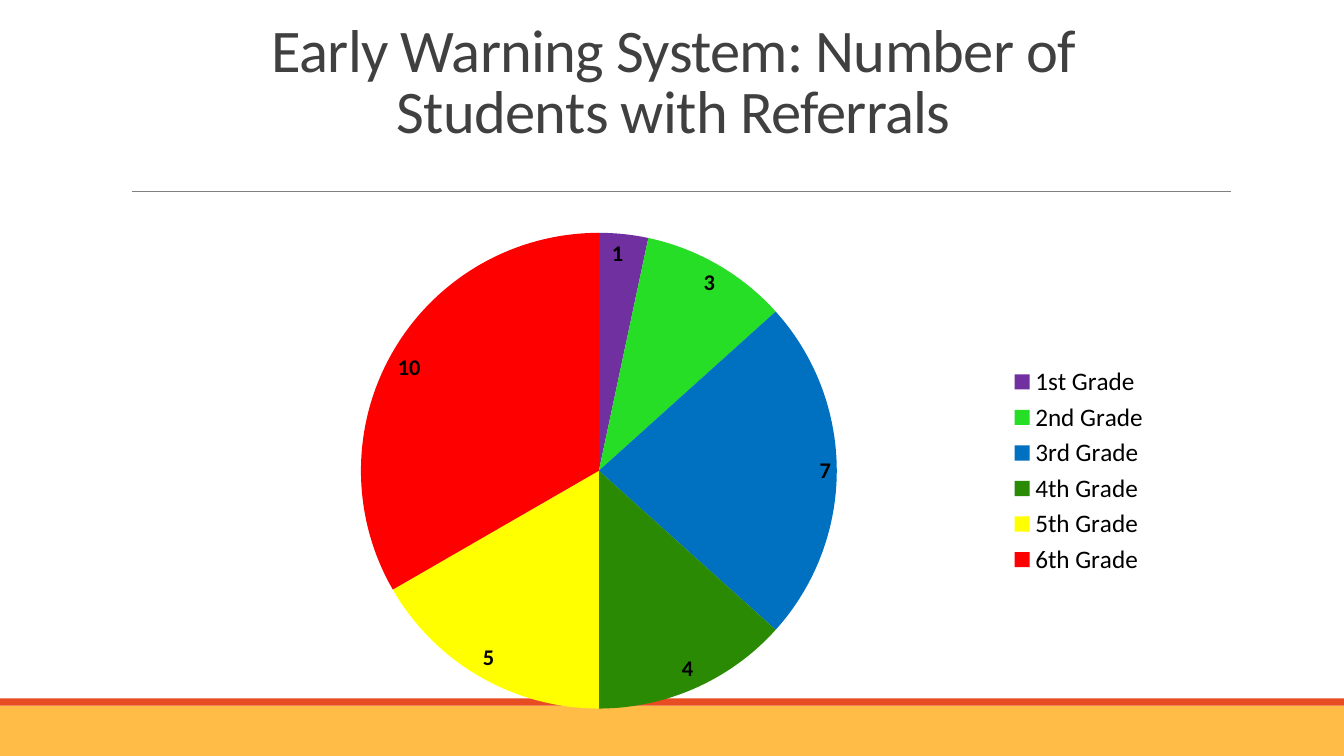
from lxml import etree
from pptx import Presentation
from pptx.chart.data import CategoryChartData
from pptx.dml.color import RGBColor
from pptx.enum.chart import XL_CHART_TYPE, XL_LABEL_POSITION, XL_LEGEND_POSITION
from pptx.enum.shapes import MSO_CONNECTOR, MSO_SHAPE
from pptx.enum.text import MSO_ANCHOR, PP_ALIGN
from pptx.oxml import parse_xml
from pptx.oxml.ns import nsdecls, qn
from pptx.util import Inches, Pt

PIE = XL_CHART_TYPE.PIE
INSIDE_END = XL_LABEL_POSITION.INSIDE_END
LEGEND_RIGHT = XL_LEGEND_POSITION.RIGHT
STRAIGHT = MSO_CONNECTOR.STRAIGHT
RECTANGLE = MSO_SHAPE.RECTANGLE
BOTTOM = MSO_ANCHOR.BOTTOM
CENTER = PP_ALIGN.CENTER

FONT = "Calibri"
AMBER = RGBColor(0xFF, 0xBD, 0x47)
ORANGE = RGBColor(0xE8, 0x4C, 0x22)
GRAY = RGBColor(0x80, 0x80, 0x80)
DARK_GRAY = RGBColor(0x40, 0x40, 0x40)
BLACK = RGBColor(0x00, 0x00, 0x00)
PURPLE = RGBColor(0x70, 0x30, 0xA0)
LIGHT_GREEN = RGBColor(0x26, 0xDE, 0x26)
BLUE = RGBColor(0x00, 0x70, 0xC0)
DARK_GREEN = RGBColor(0x2A, 0x8A, 0x04)
YELLOW = RGBColor(0xFF, 0xFF, 0x00)
RED = RGBColor(0xFF, 0x00, 0x00)

SLIDE_WIDTH, SLIDE_HEIGHT = 13.33, 7.5
REFERRALS = [
    ("1st Grade", 1, PURPLE),
    ("2nd Grade", 3, LIGHT_GREEN),
    ("3rd Grade", 7, BLUE),
    ("4th Grade", 4, DARK_GREEN),
    ("5th Grade", 5, YELLOW),
    ("6th Grade", 10, RED),
]


def set_font(font, size, color, bold=False):
    font.name = FONT
    font.size = Pt(size)
    font.bold = bold
    font.color.rgb = color


def add_text(slide, text, left, top, width, height, *, size, color,
             align, anchor, line_spacing=1.0, tracking=0):
    """Add a one-paragraph text box; tracking is in points."""
    box = slide.shapes.add_textbox(
        Inches(left), Inches(top), Inches(width), Inches(height))
    frame = box.text_frame
    frame.word_wrap = True
    frame.vertical_anchor = anchor
    paragraph = frame.paragraphs[0]
    paragraph.alignment = align
    paragraph.line_spacing = line_spacing
    run = paragraph.add_run()
    run.text = text
    set_font(run.font, size, color)
    run.font._element.set("spc", str(round(tracking * 100)))


def add_band(slide, left, top, width, height, color):
    band = slide.shapes.add_shape(
        RECTANGLE, Inches(left), Inches(top), Inches(width), Inches(height))
    band.shadow.inherit = False
    band.fill.solid()
    band.fill.fore_color.rgb = color
    band.line.fill.background()


def add_footer(slide, left, top, width, height, stripe=0.07):
    """Fill the box with an amber band below a thin orange stripe."""
    add_band(slide, left, top + stripe, width, height - stripe, AMBER)
    add_band(slide, left, top, width, stripe, ORANGE)


def add_header(slide, left, top, width, height):
    """Place the title in the upper part of the box and a rule along its bottom."""
    bottom = top + height
    rule = slide.shapes.add_connector(
        STRAIGHT, Inches(left), Inches(bottom), Inches(left + width), Inches(bottom))
    rule.line.color.rgb = GRAY
    rule.line.width = Pt(0.5)
    etree.SubElement(rule._element.spPr, qn("a:effectLst"))
    add_text(slide, "Early Warning System: Number of Students with Referrals",
             left + 0.86, top, 9.02, height - 0.4, size=43.2, color=DARK_GRAY,
             align=CENTER, anchor=BOTTOM, line_spacing=0.85, tracking=-0.5)


def set_plot_layout(chart, x, y, width, height):
    """Fix the inner plot area, in fractions of the chart's size."""
    plot_area = chart._chartSpace.chart.plotArea
    for layout in plot_area.findall(qn("c:layout")):
        plot_area.remove(layout)
    plot_area.insert(0, parse_xml(
        f'<c:layout {nsdecls("c")}><c:manualLayout><c:layoutTarget val="inner"/>'
        '<c:xMode val="edge"/><c:yMode val="edge"/>'
        f'<c:x val="{x}"/><c:y val="{y}"/><c:w val="{width}"/><c:h val="{height}"/>'
        '</c:manualLayout></c:layout>'))


def add_referral_pie(slide, left, top, width, height):
    grades, counts, colors = zip(*REFERRALS)
    data = CategoryChartData()
    data.categories = grades
    data.add_series("Series 1", counts)
    chart = slide.shapes.add_chart(
        PIE, Inches(left), Inches(top), Inches(width), Inches(height), data).chart
    set_font(chart.font, 18, BLACK)
    chart.has_title = False
    chart.has_legend = True
    chart.legend.position = LEGEND_RIGHT
    chart.legend.include_in_layout = False
    set_font(chart.legend.font, 18, BLACK)

    pie = chart.plots[0]
    pie.vary_by_categories = True
    for index, color in enumerate(colors):
        fill = pie.series[0].points[index].format.fill
        fill.solid()
        fill.fore_color.rgb = color
    pie.has_data_labels = True
    labels = pie.data_labels
    labels.show_value = True
    labels.show_percentage = False
    labels.position = INSIDE_END
    set_font(labels.font, 16, BLACK, bold=True)

    diameter = 4.72
    set_plot_layout(chart, 1.66 / width, (height - diameter) / 2 / height,
                    diameter / width, diameter / height)


def main():
    presentation = Presentation()
    presentation.slide_width = Inches(SLIDE_WIDTH)
    presentation.slide_height = Inches(SLIDE_HEIGHT)
    slide = presentation.slides.add_slide(presentation.slide_layouts[6])
    add_footer(slide, 0, 6.93, SLIDE_WIDTH, 0.57)
    add_header(slide, 1.31, 0.3, 10.9, 1.6)
    add_referral_pie(slide, 1.92, 2.17, 9.58, 5)
    presentation.save("out.pptx")


if __name__ == "__main__":
    main()
